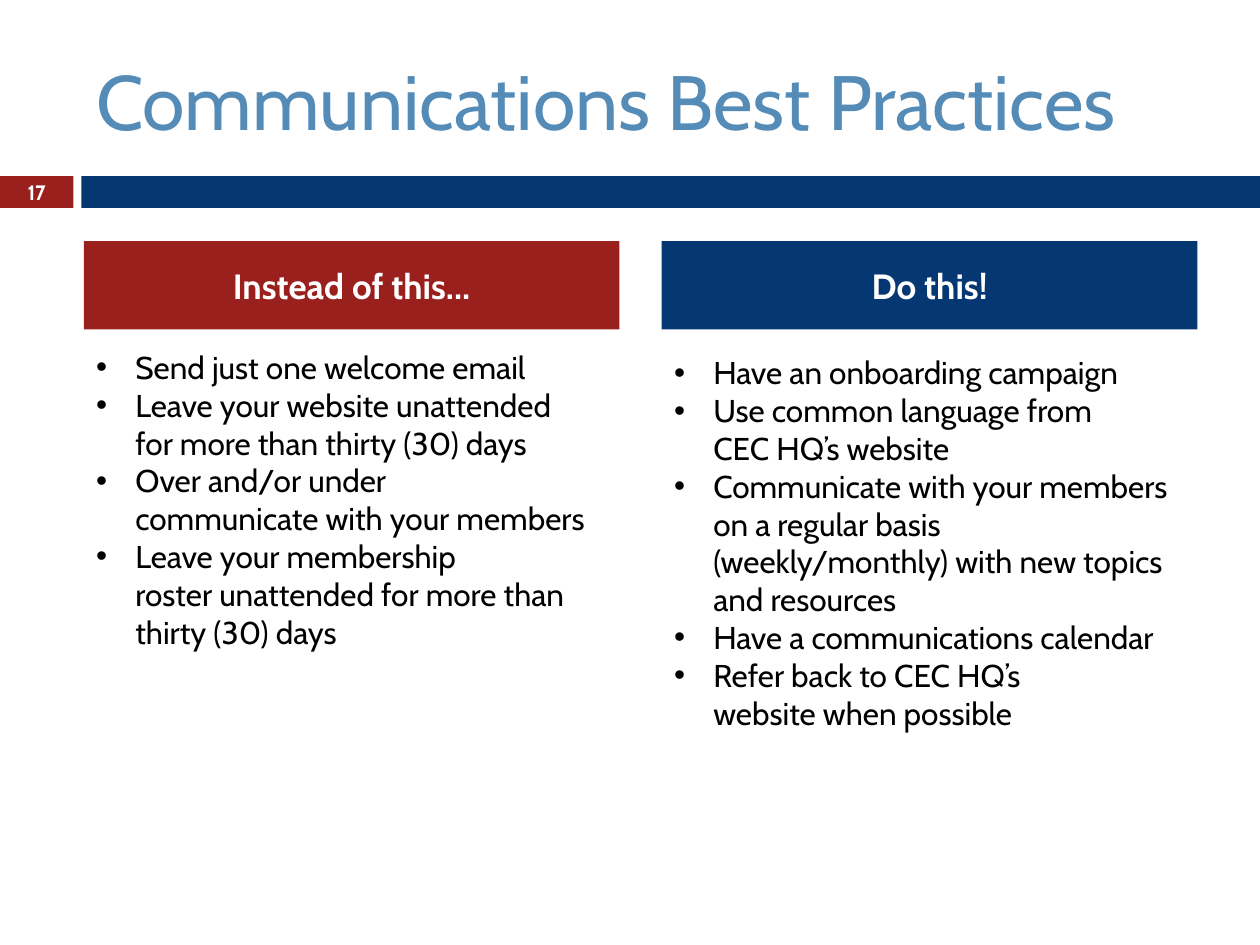
from dataclasses import dataclass

from lxml import etree
from pptx import Presentation
from pptx import util as u
from pptx.dml.color import RGBColor
from pptx.enum import shapes, text
from pptx.oxml import ns


@dataclass(frozen=True)
class Theme:
    font: str = "Cabin"
    title: str = "548BB7"
    red: str = "99201C"
    band: str = "063772"
    navy: str = "053772"
    white: str = "FFFFFF"
    black: str = "000000"
    big: float = 44
    head: float = 20
    body: float = 18
    small: float = 11.9


THEME = Theme()
LEFT, WIDTH, GAP = 1.69, 10.8, 0.85
HEAD_TOP, HEAD_TALL = 4.86, 1.78
BAR_TOP, BAR_TALL = 3.55, 0.64
TAB_WIDTH, BAR_LEFT = 1.48, 1.64
INDENT = u.Cm(0.79)
TIE = "~"  # stands for a space that must not break

DONTS = [
    "Send just one welcome email",
    "Leave your website unattended for~more than thirty (30) days",
    "Over~and/or~under communicate~with your members",
    "Leave your membership roster~unattended for more than thirty (30)~days",
]
DOS = [
    "Have an onboarding campaign",
    "Use common language from CEC~HQ’s website",
    "Communicate with your members on~a regular basis "
    "(weekly/monthly)~with new topics and resources",
    "Have a communications calendar",
    "Refer back to CEC HQ’s website~when possible",
]


def write(para, words, size, color, bold=False):
    run = para.add_run()
    run.text = words.replace(TIE, chr(160))
    font = run.font
    font.name, font.size, font.bold = THEME.font, u.Pt(size), bold
    font.color.rgb = RGBColor.from_string(color)


def center(frame, words, size):
    """Write one bold white line in the middle of a frame."""
    frame.word_wrap = True
    frame.vertical_anchor = text.MSO_ANCHOR.MIDDLE
    para = frame.paragraphs[0]
    para.alignment = text.PP_ALIGN.CENTER
    write(para, words, size, THEME.white, True)


def add_block(slide, box, color):
    block = slide.shapes.add_shape(shapes.MSO_SHAPE.RECTANGLE, *map(u.Cm, box))
    block.shadow.inherit = False
    block.fill.solid()
    block.fill.fore_color.rgb = RGBColor.from_string(color)
    block.line.fill.background()
    return block


def add_title(slide, words):
    box = slide.shapes.add_textbox(*map(u.Cm, (LEFT, 0.64, 22.66, 2.74)))
    frame = box.text_frame
    frame.word_wrap = True
    frame.vertical_anchor = text.MSO_ANCHOR.MIDDLE
    write(frame.paragraphs[0], words, THEME.big, THEME.title)


def add_bullet(para):
    props = para._p.get_or_add_pPr()
    props.set("marL", str(INDENT))
    props.set("indent", str(-INDENT))
    etree.SubElement(props, ns.qn("a:buFont"), typeface="Arial")
    etree.SubElement(props, ns.qn("a:buChar"), char="•")


def add_list(slide, left, top, tall, items):
    box = slide.shapes.add_textbox(*map(u.Cm, (left, top, WIDTH, tall)))
    frame = box.text_frame
    frame.word_wrap = True
    for rank, item in enumerate(items):
        para = frame.add_paragraph() if rank else frame.paragraphs[0]
        add_bullet(para)
        write(para, item, THEME.body, THEME.black)


def main():
    deck = Presentation()
    deck.slide_width, deck.slide_height = u.Cm(25.4), u.Cm(19.05)
    slide = deck.slides.add_slide(deck.slide_layouts[6])

    tab = add_block(slide, (0, BAR_TOP, TAB_WIDTH, BAR_TALL), THEME.red)
    frame = tab.text_frame
    frame.margin_top = frame.margin_bottom = 0
    center(frame, "17", THEME.small)
    add_block(slide, (BAR_LEFT, BAR_TOP, 25.4 - BAR_LEFT, BAR_TALL), THEME.band)
    add_title(slide, "Communications Best Practices")

    columns = [
        ("Instead of this...", THEME.red, 6.89, 6.4, DONTS),
        ("Do this!", THEME.navy, 7, 7.95, DOS),
    ]
    for rank, (name, color, top, tall, items) in enumerate(columns):
        left = LEFT + rank * (WIDTH + GAP)
        head = add_block(slide, (left, HEAD_TOP, WIDTH, HEAD_TALL), color)
        center(head.text_frame, name, THEME.head)
        add_list(slide, left, top, tall, items)

    deck.save("out.pptx")


if __name__ == "__main__":
    main()
